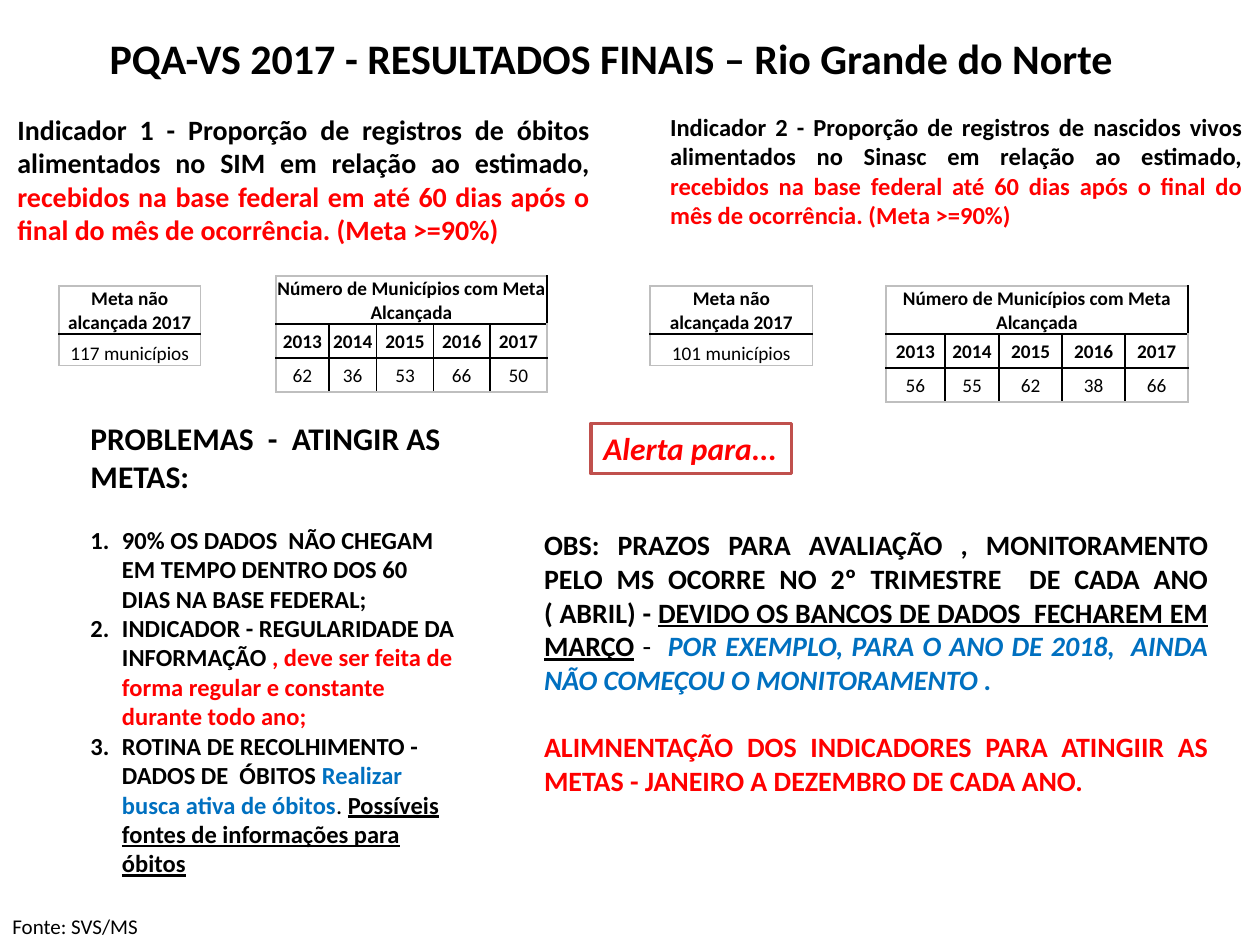
import lxml.etree
import pptx
import pptx.dml.color
import pptx.enum.shapes
import pptx.enum.text
import pptx.oxml.ns
import pptx.util

COLORS = {"black": "000000", "red": "FF0000", "blue": "0070C0",
          "white": "FFFFFF", "frame": "C0504D", "gray": "BFBFBF"}
RGB = {name: pptx.dml.color.RGBColor.from_string(value) for name, value in COLORS.items()}
ALIGN = pptx.enum.text.PP_ALIGN
ANCHOR = pptx.enum.text.MSO_ANCHOR
qn = pptx.oxml.ns.qn

deck = pptx.Presentation()
deck.slide_width = pptx.util.Inches(10)
deck.slide_height = pptx.util.Inches(7.5)
# Square grid: 100 columns by 75 rows
UNIT = deck.slide_width // 100
slide = deck.slides.add_slide(deck.slide_layouts[5])


def grid(*cells):
    return [round(cell * UNIT) for cell in cells]


def write(paragraph, pieces, size, align=ALIGN.LEFT):
    """Fill a paragraph with (text, colour, styles); styles are letters of b, i, u."""
    paragraph.alignment = align
    for text, color, styles in pieces:
        run = paragraph.add_run()
        run.text = text
        run.font.name = "Calibri"
        run.font.size = pptx.util.Pt(size)
        run.font.color.rgb = RGB[color]
        run.font.bold = "b" in styles
        run.font.italic = "i" in styles
        run.font.underline = "u" in styles


# Title
title = slide.shapes.title
title.left, title.top, title.width, title.height = grid(7.7, 2.1, 84, 5)
title.text_frame.vertical_anchor = ANCHOR.TOP
title.text_frame.auto_size = pptx.enum.text.MSO_AUTO_SIZE.NONE
write(title.text_frame.paragraphs[0],
      [("PQA-VS 2017 - RESULTADOS FINAIS – Rio Grande do Norte", "black", "b")], 24)

# Text blocks: box, wrap, paragraphs of (pieces, size, alignment, space before, numbered)
text_blocks = [
    ((0.4, 8.4, 47.4, 11.8), True, [
        ([("Indicador 1 - Proporção de registros de óbitos alimentados no SIM em relação ao estimado, ", "black", "b"),
          ("recebidos na base federal em até 60 dias após o final do mês de ocorrência. (Meta >=90%)", "red", "b")],
         16, ALIGN.JUSTIFY, 0, False)]),
    ((52.2, 8.4, 47.4, 10.4), True, [
        ([("Indicador 2 - Proporção de registros de nascidos vivos alimentados no Sinasc em relação ao estimado, ", "black", "b"),
          ("recebidos na base federal até 60 dias após o final do mês de ocorrência. (Meta >=90%)", "red", "b")],
         14, ALIGN.JUSTIFY, 0, False)]),
    ((6.2, 32.8, 31.3, 39.7), True, [
        ([("PROBLEMAS  -  ATINGIR AS METAS:", "black", "b")], 18, ALIGN.LEFT, 0, False),
        ([("90% OS DADOS  NÃO CHEGAM EM TEMPO DENTRO DOS 60 DIAS NA BASE FEDERAL;", "black", "b")],
         14, ALIGN.LEFT, 17, True),
        ([("INDICADOR - REGULARIDADE DA INFORMAÇÃO ", "black", "b"),
          (", deve ser feita de forma regular e constante durante todo ano;", "red", "b")],
         14, ALIGN.LEFT, 0, True),
        ([("ROTINA DE RECOLHIMENTO -  DADOS DE  ÓBITOS ", "black", "b"),
          ("Realizar busca ativa de óbitos", "blue", "b"),
          (". ", "black", ""),
          ("Possíveis fontes de informações para óbitos", "black", "bu")],
         14, ALIGN.LEFT, 0, True)]),
    ((42.2, 41.4, 54.7, 25.2), True, [
        ([("OBS: PRAZOS PARA AVALIAÇÃO , MONITORAMENTO PELO MS OCORRE NO 2º TRIMESTRE  DE CADA ANO ( ABRIL) - ", "black", "b"),
          ("DEVIDO OS BANCOS DE DADOS  FECHAREM EM MARÇO", "black", "bu"),
          (" -  ", "black", ""),
          ("POR EXEMPLO, PARA O ANO DE 2018,  AINDA NÃO COMEÇOU O MONITORAMENTO .", "blue", "bi")],
         16, ALIGN.JUSTIFY, 0, False),
        ([("ALIMNENTAÇÃO DOS INDICADORES PARA ATINGIIR AS METAS - JANEIRO A DEZEMBRO DE CADA ANO.", "red", "b")],
         16, ALIGN.JUSTIFY, 19.5, False)]),
    ((0, 72, 12.1, 3), False, [
        ([("Fonte: SVS/MS", "black", "")], 12, ALIGN.LEFT, 0, False)]),
]
for box, wrap, paragraphs in text_blocks:
    frame = slide.shapes.add_textbox(*grid(*box)).text_frame
    frame.word_wrap = wrap
    for index, (pieces, size, align, gap, numbered) in enumerate(paragraphs):
        paragraph = frame.add_paragraph() if index else frame.paragraphs[0]
        write(paragraph, pieces, size, align)
        paragraph.space_before = pptx.util.Pt(gap)
        if numbered:
            properties = paragraph._p.get_or_add_pPr()
            indent = round(2.5 * UNIT)
            properties.set("marL", str(indent))
            properties.set("indent", str(-indent))
            lxml.etree.SubElement(properties, qn("a:buFont"), typeface="+mj-lt")
            lxml.etree.SubElement(properties, qn("a:buAutoNum"), type="arabicPeriod")

# Tables: left, top, column widths, row heights, rows; the heading spans all columns
missed = "Meta não alcançada 2017"
reached = "Número de Municípios com Meta Alcançada"
years = ["2013", "2014", "2015", "2016", "2017"]
yearly_rows = [3.8, 2.7, 2.7]
missed_rows = [3.8, 2.5]
tables = [
    (4.7, 22.7, [11.2], missed_rows, [[missed], ["117 municípios"]]),
    (21.9, 21.9, [4.2, 3.8, 4.5, 4.5, 4.5], yearly_rows,
     [[reached], years, ["62", "36", "53", "66", "50"]]),
    (51.6, 22.7, [12.9], missed_rows, [[missed], ["101 municípios"]]),
    (70.3, 22.7, [4.7, 4.3, 5, 5, 5], yearly_rows,
     [[reached], years, ["56", "55", "62", "38", "66"]]),
]
for left, top, widths, heights, rows in tables:
    table = slide.shapes.add_table(len(heights), len(widths),
                                   *grid(left, top, sum(widths), sum(heights))).table
    table.first_row = table.horz_banding = False
    for column, width in zip(table.columns, grid(*widths)):
        column.width = width
    for row, height in zip(table.rows, grid(*heights)):
        row.height = height
    last_row, last_column = len(heights) - 1, len(widths) - 1
    if last_column:
        table.cell(0, 0).merge(table.cell(0, last_column))
    for r in range(last_row + 1):
        for c in range(last_column + 1):
            cell = table.cell(r, c)
            # Gray outside, black inside
            outer = {"L": c == 0, "R": c == last_column, "T": r == 0, "B": r == last_row}
            for side, is_outer in outer.items():
                line = lxml.etree.SubElement(cell._tc.get_or_add_tcPr(), qn("a:ln" + side), w="12700")
                fill = lxml.etree.SubElement(line, qn("a:solidFill"))
                lxml.etree.SubElement(fill, qn("a:srgbClr"), val=COLORS["gray" if is_outer else "black"])
            cell.fill.solid()
            cell.fill.fore_color.rgb = RGB["white"]
            cell.margin_left = cell.margin_right = cell.margin_top = pptx.util.Inches(0.01)
            cell.margin_bottom = 0
            yearly_value = r > 0 and last_column > 0
            cell.vertical_anchor = ANCHOR.MIDDLE if yearly_value else ANCHOR.BOTTOM
            if c < len(rows[r]):
                bold = r == 0 or rows[r] is years
                write(cell.text_frame.paragraphs[0],
                      [(rows[r][c], "black", "b" if bold else "")], 11, ALIGN.CENTER)

# Alert box
alert = slide.shapes.add_shape(pptx.enum.shapes.MSO_SHAPE.RECTANGLE, *grid(46.9, 33.6, 15.9, 4))
alert.shadow.inherit = False
alert.fill.solid()
alert.fill.fore_color.rgb = RGB["white"]
alert.line.color.rgb = RGB["frame"]
alert.line.width = pptx.util.Pt(2)
alert.text_frame.word_wrap = False
alert.text_frame.vertical_anchor = ANCHOR.TOP
write(alert.text_frame.paragraphs[0], [("Alerta para...", "red", "bi")], 18, ALIGN.JUSTIFY)

deck.save("out.pptx")
